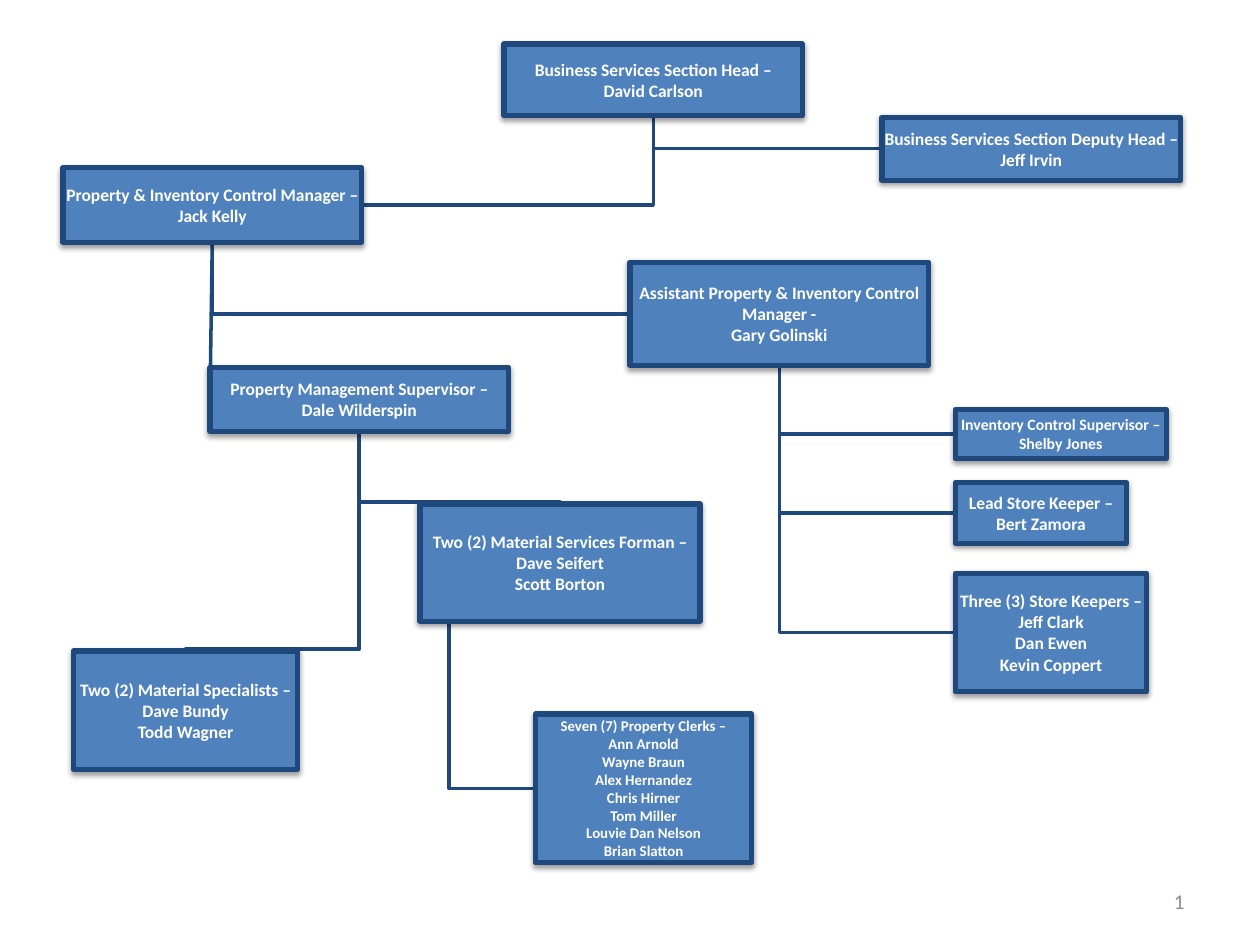
from dataclasses import dataclass

from pptx import Presentation
from pptx.dml.color import RGBColor
from pptx.enum.shapes import MSO_CONNECTOR, MSO_SHAPE
from pptx.enum.text import MSO_ANCHOR, PP_ALIGN
from pptx.oxml import parse_xml
from pptx.oxml.ns import nsdecls
from pptx.util import Pt

RECTANGLE = MSO_SHAPE.RECTANGLE
STRAIGHT = MSO_CONNECTOR.STRAIGHT
MIDDLE = MSO_ANCHOR.MIDDLE
CENTER, RIGHT = PP_ALIGN.CENTER, PP_ALIGN.RIGHT

FONT = "Calibri"
COLORS = {"fill": "4F81BD", "line": "1F497D", "text": "FFFFFF",
          "number": "8C8C8C", "shadow": "000000"}
BLANK_LAYOUT = 6
WIDE = 170.6


@dataclass
class Position:
    """One box of the chart; lengths in points."""
    left: float
    top: float
    width: float
    height: float
    lines: list[str]
    size: float = 10

    @property
    def center(self) -> float:
        return self.left + self.width / 2

    @property
    def middle(self) -> float:
        return self.top + self.height / 2

    @property
    def right(self) -> float:
        return self.left + self.width

    @property
    def bottom(self) -> float:
        return self.top + self.height


@dataclass
class Link:
    """Reporting line that enters the child at its left, right or top."""
    parent: str
    child: str
    side: str = "left"
    offset: float = 0


POSITIONS = {
    "head": Position(288, 25.2, WIDE, 41,
                     ["Business Services Section Head –", "David Carlson"]),
    "deputy": Position(504, 67, WIDE, 36,
                       ["Business Services Section Deputy Head –", "Jeff Irvin"]),
    "manager": Position(36, 95.8, WIDE, 42.8,
                        ["Property & Inventory Control Manager –", "Jack Kelly"]),
    "assistant": Position(360, 149.8, WIDE, 59,
                          ["Assistant Property & Inventory Control Manager -",
                           "Gary Golinski"]),
    "inventory": Position(545.8, 234, 120.6, 28,
                          ["Inventory Control Supervisor –", "Shelby Jones"], 9),
    "lead": Position(545.8, 275.8, 98, 34.6,
                     ["Lead Store Keeper –", "Bert Zamora"]),
    "keepers": Position(545.8, 327.6, 109.5, 67.7,
                        ["Three (3) Store Keepers –", "Jeff Clark", "Dan Ewen",
                         "Kevin Coppert"]),
    "supervisor": Position(120, 210, WIDE, 36.5,
                           ["Property Management Supervisor –", "Dale Wilderspin"]),
    "forman": Position(240, 288, 160, 67,
                       ["Two (2) Material Services Forman –", "Dave Seifert",
                        "Scott Borton"]),
    "clerks": Position(306, 408, 123.5, 85,
                       ["Seven (7) Property Clerks –", "Ann Arnold", "Wayne Braun",
                        "Alex Hernandez", "Chris Hirner", "Tom Miller",
                        "Louvie Dan Nelson", "Brian Slatton"], 8.5),
    "specialists": Position(42, 372, 128, 67.7,
                            ["Two (2) Material Specialists –", "Dave Bundy",
                             "Todd Wagner"]),
}

LINKS = [
    Link("supervisor", "specialists", "top"),
    Link("forman", "clerks", offset=-63.5),
    Link("supervisor", "forman", "top"),
    Link("assistant", "keepers"),
    Link("assistant", "lead"),
    Link("assistant", "inventory"),
    Link("manager", "assistant"),
    Link("head", "manager", "right"),
    Link("head", "deputy"),
]


def color(name: str) -> RGBColor:
    return RGBColor.from_string(COLORS[name])


def style_line(line, width: float) -> None:
    line.color.rgb = color("line")
    line.width = Pt(width)


def draw_link(shapes, link: Link) -> None:
    parent, child = POSITIONS[link.parent], POSITIONS[link.child]
    start = parent.center + link.offset
    if link.side == "top":
        turn = child.top - 1
        points = [(start, turn), (child.center, turn), (child.center, child.top)]
    else:
        points = [(start, child.middle), (getattr(child, link.side), child.middle)]
    builder = shapes.build_freeform(Pt(start), Pt(parent.bottom))
    builder.add_line_segments([(Pt(x), Pt(y)) for x, y in points], close=False)
    elbow = builder.convert_to_shape()
    elbow.fill.background()
    elbow.shadow.inherit = False
    style_line(elbow.line, 2)


def draw_straight_link(shapes, parent: Position, child: Position) -> None:
    line = shapes.add_connector(STRAIGHT, Pt(parent.center), Pt(parent.bottom),
                                Pt(child.left), Pt(child.top + child.height / 2))
    style_line(line.line, 2)
    line._element.spPr.append(parse_xml(f"<a:effectLst {nsdecls('a')}/>"))


def add_shadow(box) -> None:
    box._element.spPr.append(parse_xml(
        f'<a:effectLst {nsdecls("a")}>'
        f'<a:outerShdw blurRad="{Pt(3.1)}" dist="{Pt(1.6)}" dir="5400000" rotWithShape="0">'
        f'<a:srgbClr val="{COLORS["shadow"]}"><a:alpha val="38000"/></a:srgbClr>'
        '</a:outerShdw></a:effectLst>'))


def draw_position(shapes, position: Position) -> None:
    box = shapes.add_shape(RECTANGLE, Pt(position.left), Pt(position.top),
                           Pt(position.width), Pt(position.height))
    box.fill.solid()
    box.fill.fore_color.rgb = color("fill")
    style_line(box.line, 3)
    add_shadow(box)
    frame = box.text_frame
    frame.word_wrap = True
    frame.vertical_anchor = MIDDLE
    frame.margin_left = frame.margin_right = Pt(0.7)
    frame.margin_top = frame.margin_bottom = Pt(0.7)
    frame.text = "\n".join(position.lines)
    for paragraph in frame.paragraphs:
        paragraph.alignment = CENTER
        for span in paragraph.runs:
            span.font.name = FONT
            span.font.size = Pt(position.size)
            span.font.bold = True
            span.font.color.rgb = color("text")


def draw_page_number(shapes) -> None:
    box = shapes.add_textbox(Pt(516), Pt(500.5), Pt(168), Pt(28.8))
    frame = box.text_frame
    frame.word_wrap = True
    frame.vertical_anchor = MIDDLE
    frame.text = "1"
    para = frame.paragraphs[0]
    para.alignment = RIGHT
    font = para.runs[0].font
    font.name = FONT
    font.size = Pt(12)
    font.color.rgb = color("number")


def main() -> None:
    deck = Presentation()
    deck.slide_width, deck.slide_height = Pt(720), Pt(540)
    page = deck.slides.add_slide(deck.slide_layouts[BLANK_LAYOUT])

    # Reporting lines lie behind the boxes
    for link in LINKS:
        draw_link(page.shapes, link)
    draw_straight_link(page.shapes, POSITIONS["manager"], POSITIONS["supervisor"])

    # Boxes
    for position in POSITIONS.values():
        draw_position(page.shapes, position)

    draw_page_number(page.shapes)
    deck.save("out.pptx")


if __name__ == "__main__":
    main()
